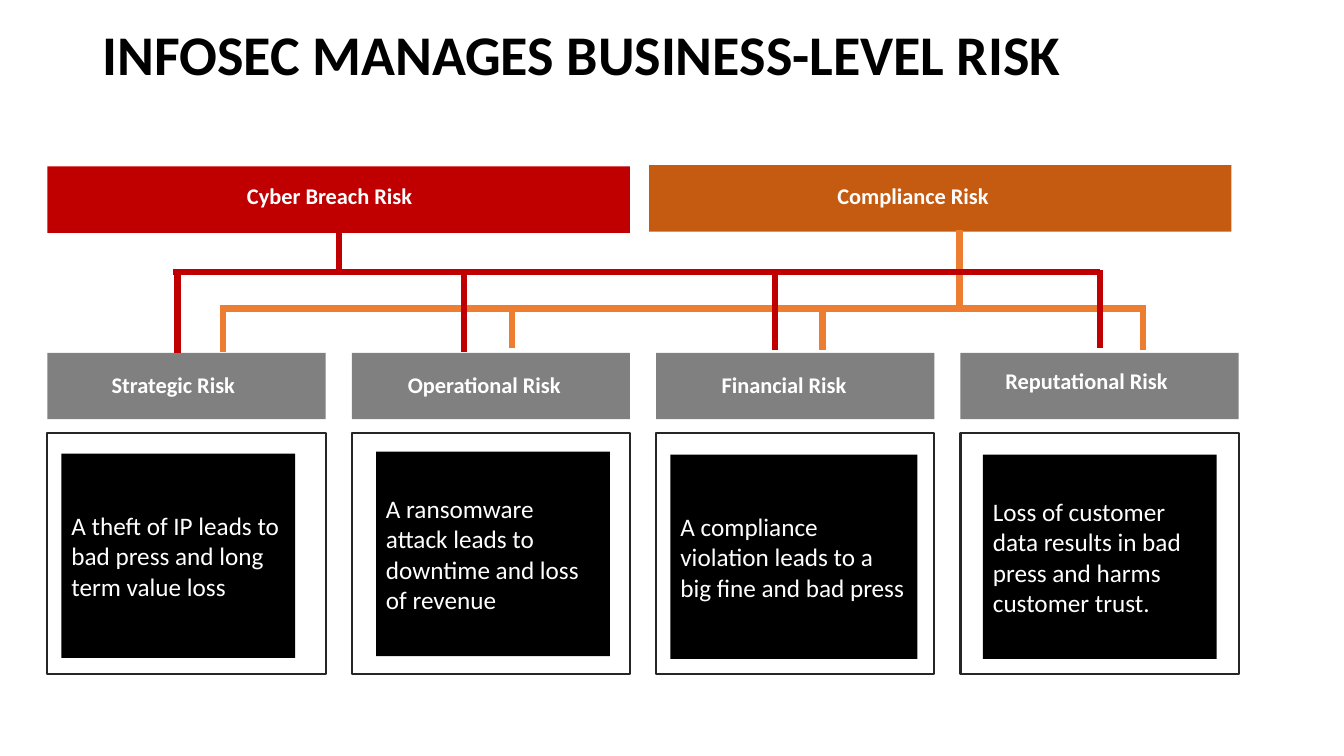
from lxml.etree import SubElement
from pptx import Presentation
from pptx.dml.color import RGBColor
from pptx.enum.shapes import MSO_CONNECTOR as CONN, MSO_SHAPE as SHAPE
from pptx.enum.text import MSO_ANCHOR as ANCHOR, PP_ALIGN as ALIGN
from pptx.oxml.ns import qn
from pptx.util import Pt

BLACK = RGBColor(0x00, 0x00, 0x00)
WHITE = RGBColor(0xFF, 0xFF, 0xFF)
GREY = RGBColor(0x80, 0x80, 0x80)
OUTLINE = RGBColor(0x26, 0x26, 0x26)
RED = RGBColor(0xC0, 0x00, 0x00)
RUST = RGBColor(0xC5, 0x5A, 0x11)
ORANGE = RGBColor(0xED, 0x7D, 0x31)

TITLE = {"name": "Calibri", "size": Pt(40), "bold": True}
LABEL = {"name": "Calibri", "size": Pt(16), "bold": True}
BODY = {"name": "Calibri", "size": Pt(18), "bold": False}

COL_X, COL_PITCH, COL_W = 33.9, 217.4, 198.7
HEADER_Y, BAR_H, LABEL_H = 252, 47.5, 26.6
PANEL_Y, PANEL_H, CARD_H = 309.6, 172, 146

SOURCES = [
    ("Cyber Breach Risk", RED, (33.9, 118.8, 416, BAR_H), (118, 7.9, 167)),
    ("Compliance Risk", RUST, (463.7, 118, 416, BAR_H), (114.5, 8.7, 148)),
]
TREES = [
    (ORANGE, (685.5, 164), (157, 818.6, 220.3),
     [(159.1, 218.2, 251.3), (365.8, 221.8, 248.4),
      (587.5, 220.3, 249.8), (816.5, 223.2, 249.8)]),
    (RED, (242, 165.6), (123.8, 785.5, 194.4),
     [(126.9, 195.8, 252), (331.5, 195.1, 251.3),
      (553.7, 193.7, 249.8), (785.9, 193, 248.4)]),
]
IMPACTS = [
    ("Strategic Risk", (32.4, 9.4, 115),
     "A theft of IP leads to bad press and long term value loss", (10, 14.4, 167)),
    ("Operational Risk", (26.6, 9.4, 136),
     "A ransomware attack leads to downtime and loss of revenue", (17.3, 13, 167)),
    ("Financial Risk", (33.8, 9.4, 115),
     "A compliance violation leads to a big fine and bad press", (10.2, 15.1, 176.4)),
    ("Reputational Risk", (18.7, 6.5, 142.6),
     "Loss of customer data results in bad press and harms customer trust.", (16, 15.1, 167)),
]


def add_rect(s, box, fill=None, line=None):
    """Add a flat rectangle with an optional fill and outline."""
    sp = s.shapes.add_shape(SHAPE.RECTANGLE, *map(Pt, box))
    sp.shadow.inherit = False
    if fill is None:
        sp.fill.background()
    else:
        sp.fill.solid()
        sp.fill.fore_color.rgb = fill
    if line is None:
        sp.line.fill.background()
    else:
        sp.line.color.rgb = line
        sp.line.width = Pt(1.5)
    return sp


def write(sp, text, fmt, color, align=ALIGN.LEFT, wrap=True):
    """Write one paragraph into a shape and return it."""
    tf = sp.text_frame
    tf.word_wrap = wrap
    tf.vertical_anchor = ANCHOR.MIDDLE
    p = tf.paragraphs[0]
    p.alignment = align
    r = p.add_run()
    r.text = text
    for key, value in fmt.items():
        setattr(r.font, key, value)
    r.font.color.rgb = color
    return p


def add_line(s, x1, y1, x2, y2, color):
    """Add a thick straight line without a shadow."""
    c = s.shapes.add_connector(CONN.STRAIGHT, *map(Pt, (x1, y1, x2, y2)))
    c.line.color.rgb = color
    c.line.width = Pt(4.5)
    SubElement(c._element.spPr, qn("a:effectLst"))


def add_title(s, box, text):
    """Add the slide title."""
    p = write(s.shapes.add_textbox(*map(Pt, box)), text, TITLE, BLACK)
    p.line_spacing = 0.9


def add_bar(s, box, text, fill, label):
    """Add a coloured bar with its label placed relative to it."""
    add_rect(s, box, fill)
    dx, dy, w = label
    tb = s.shapes.add_textbox(*map(Pt, (box[0] + dx, box[1] + dy, w, LABEL_H)))
    write(tb, text, LABEL, WHITE, ALIGN.CENTER, wrap=False)


def add_tree(s, color, stem, bus, drops):
    """Add a stem, a horizontal bus and the drops to each impact."""
    left, right, y = bus
    add_line(s, *stem, stem[0], y, color)
    add_line(s, left, y, right, y, color)
    for x, top, bottom in drops:
        add_line(s, x, top, x, bottom, color)


def add_panel(s, box, text, card):
    """Add an outlined panel holding a dark example card."""
    add_rect(s, box, line=OUTLINE)
    dx, dy, w = card
    sp = add_rect(s, (box[0] + dx, box[1] + dy, w, CARD_H), BLACK)
    write(sp, text, BODY, WHITE).space_after = Pt(6)


def main():
    """Build the slide and save it."""
    prs = Presentation()
    prs.slide_width, prs.slide_height = Pt(960), Pt(540)
    s = prs.slides.add_slide(prs.slide_layouts[6])
    for text, fill, box, label in SOURCES:
        add_bar(s, box, text, fill, label)
    for i, (name, label, example, card) in enumerate(IMPACTS):
        x = COL_X + i * COL_PITCH
        add_bar(s, (x, HEADER_Y, COL_W, BAR_H), name, GREY, label)
        add_panel(s, (x, PANEL_Y, COL_W, PANEL_H), example, card)
    for tree in TREES:
        add_tree(s, *tree)
    add_title(s, (66.2, 1.4, 828, 78.5), "INFOSEC MANAGES BUSINESS-LEVEL RISK")
    prs.save("out.pptx")


if __name__ == "__main__":
    main()
